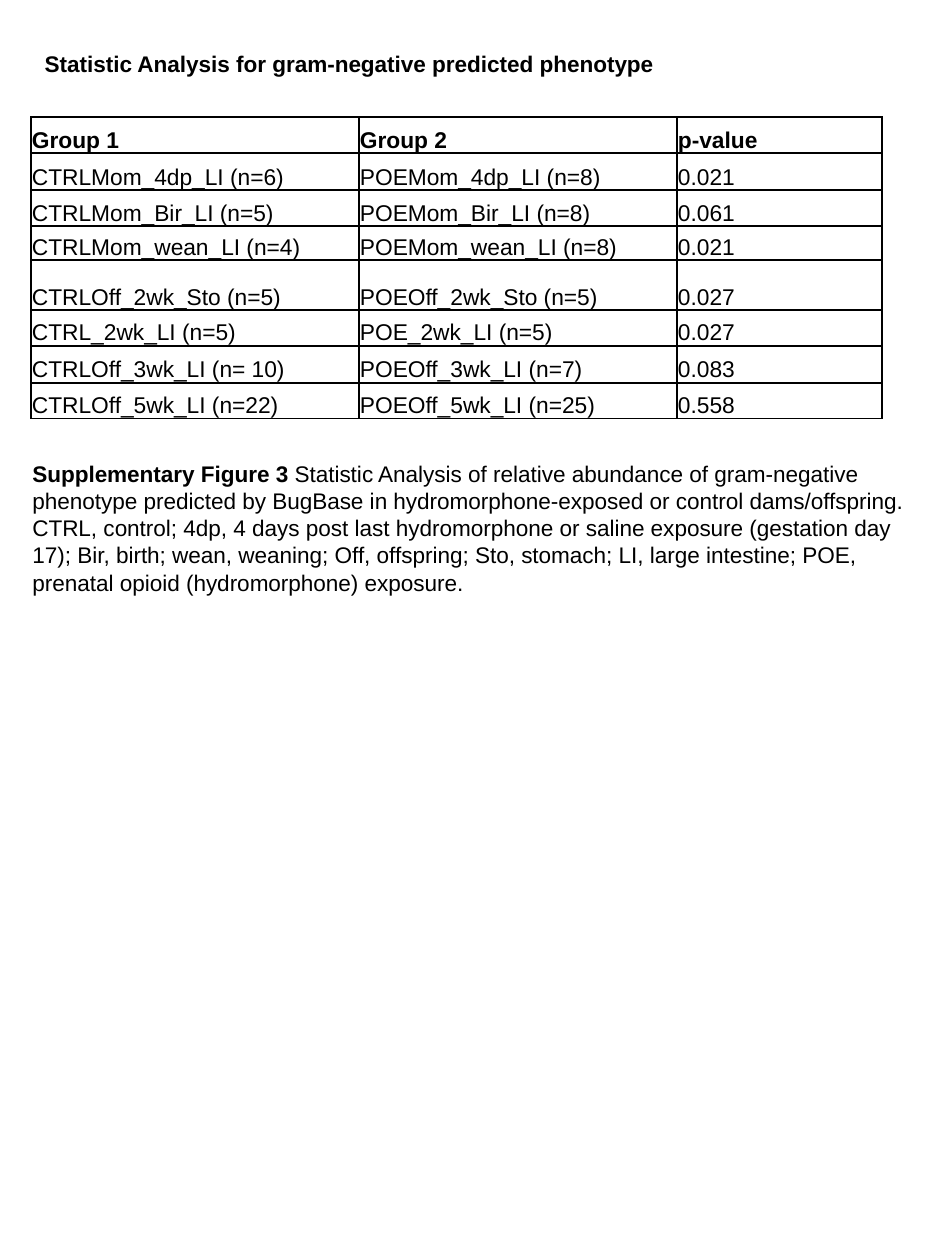
"""Build a one-page table of p-values with a title and a caption."""
from lxml.etree import SubElement
from pptx import Presentation
from pptx.dml.color import RGBColor
from pptx.enum.text import MSO_ANCHOR as Anchor, MSO_AUTO_SIZE as AutoSize, PP_ALIGN as Align
from pptx.oxml.ns import qn
from pptx.util import Emu, Pt

BLACK = "000000"


def px(length):
    return Emu(round(length * 914400 / 126))


def write(paragraph, text, size=12.9, bold=False, color=BLACK):
    paragraph.alignment = Align.LEFT
    run = paragraph.add_run()
    run.text = text
    run.font.name = "Arial"
    run.font.size = Pt(size)
    run.font.bold = bold
    run.font.color.rgb = RGBColor.from_string(color)


deck = Presentation()
deck.slide_width, deck.slide_height = px(945), px(1260)
slide = deck.slides.add_slide(deck.slide_layouts[5])

title = slide.shapes.title
title.left, title.top, title.width, title.height = px(32), px(44), px(752), px(40)
title.text_frame.vertical_anchor = Anchor.TOP
title.text_frame.auto_size = AutoSize.SHAPE_TO_FIT_TEXT
write(title.text_frame.paragraphs[0],
      "Statistic Analysis for gram-negative predicted phenotype", bold=True)

comparisons = [
    ("Group 1", "Group 2", "p-value"),
    ("CTRLMom_4dp_LI (n=6)", "POEMom_4dp_LI (n=8)", "0.021"),
    ("CTRLMom_Bir_LI (n=5)", "POEMom_Bir_LI (n=8)", "0.061"),
    ("CTRLMom_wean_LI (n=4)", "POEMom_wean_LI (n=8)", "0.021"),
    ("CTRLOff_2wk_Sto (n=5)", "POEOff_2wk_Sto (n=5)", "0.027"),
    ("CTRL_2wk_LI (n=5)", "POE_2wk_LI (n=5)", "0.027"),
    ("CTRLOff_3wk_LI (n= 10)", "POEOff_3wk_LI (n=7)", "0.083"),
    ("CTRLOff_5wk_LI (n=22)", "POEOff_5wk_LI (n=25)", "0.558"),
]
column_widths = [328, 318, 205]
row_heights = [36, 37, 36, 34, 50, 36, 37, 36]

p_values = slide.shapes.add_table(
    len(comparisons), len(column_widths), px(31), px(117),
    px(sum(column_widths)), px(sum(row_heights))).table
p_values.first_row = p_values.horz_banding = False
for column, width in zip(p_values.columns, column_widths):
    column.width = px(width)
for row, height in zip(p_values.rows, row_heights):
    row.height = px(height)

for row_index, comparison in enumerate(comparisons):
    for column_index, entry in enumerate(comparison):
        cell = p_values.cell(row_index, column_index)
        cell.vertical_anchor = Anchor.BOTTOM
        cell.margin_left = cell.margin_right = cell.margin_top = px(1)
        cell.margin_bottom = 0
        write(cell.text_frame.paragraphs[0], entry, size=13, bold=row_index == 0)
        properties = cell._tc.get_or_add_tcPr()
        for side in ("a:lnL", "a:lnR", "a:lnT", "a:lnB"):
            border = SubElement(properties, qn(side), w=str(Pt(1)))
            SubElement(SubElement(border, qn("a:solidFill")), qn("a:srgbClr"), val=BLACK)
        cell.fill.background()

caption = slide.shapes.add_textbox(px(20), px(454), px(905), px(149)).text_frame
caption.word_wrap = True
caption.auto_size = AutoSize.SHAPE_TO_FIT_TEXT
write(caption.paragraphs[0], "Supplementary Figure 3 ", bold=True)
write(caption.paragraphs[0],
      "Statistic Analysis of relative abundance of gram-negative phenotype predicted by "
      "BugBase in hydromorphone-exposed or control dams/offspring. CTRL, control; 4dp, "
      "4 days post last hydromorphone or saline exposure (gestation day 17); Bir, birth; "
      "wean, weaning; Off, offspring; Sto, stomach; LI, large intestine; POE, prenatal "
      "opioid (hydromorphone) exposure.")

deck.save("out.pptx")
